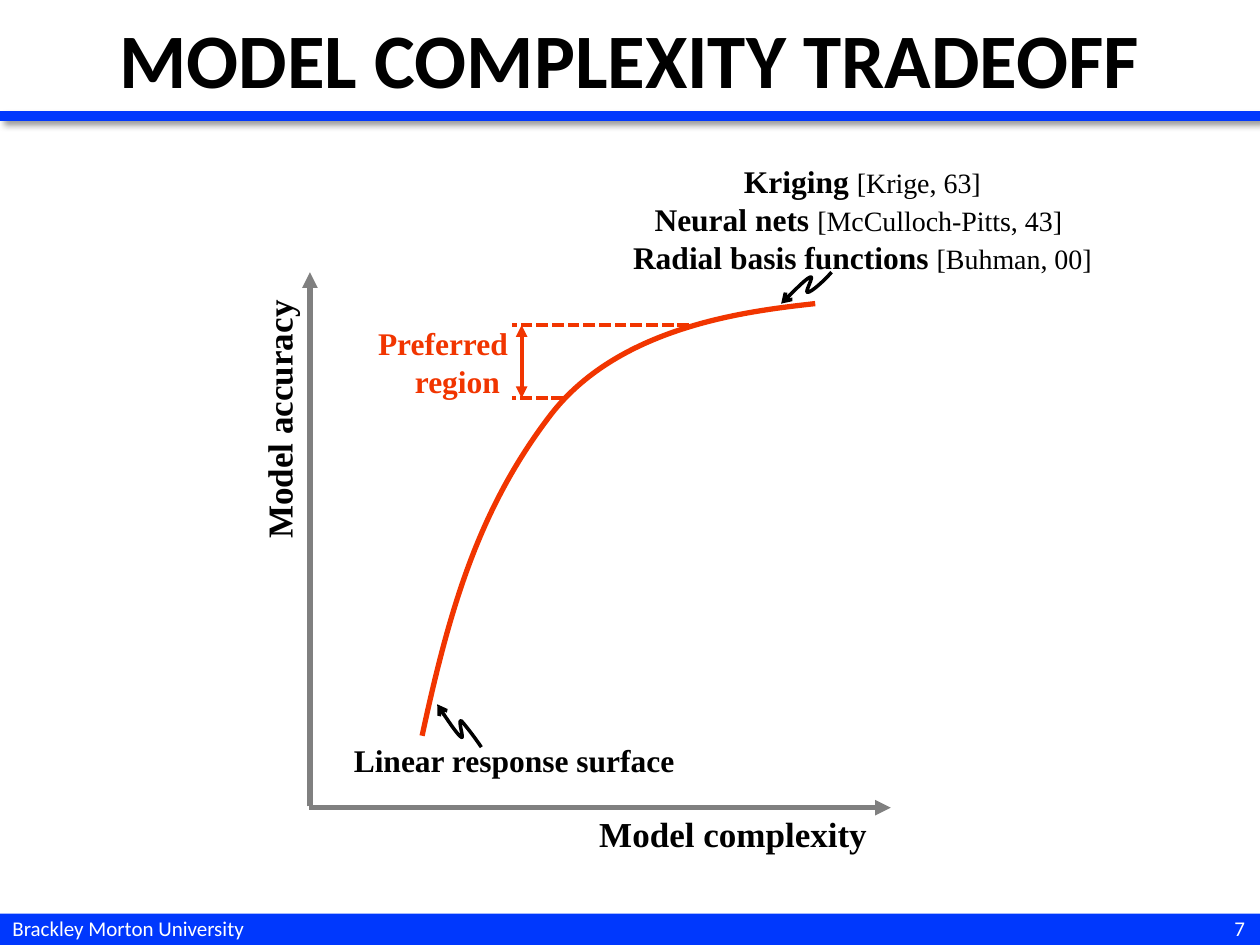
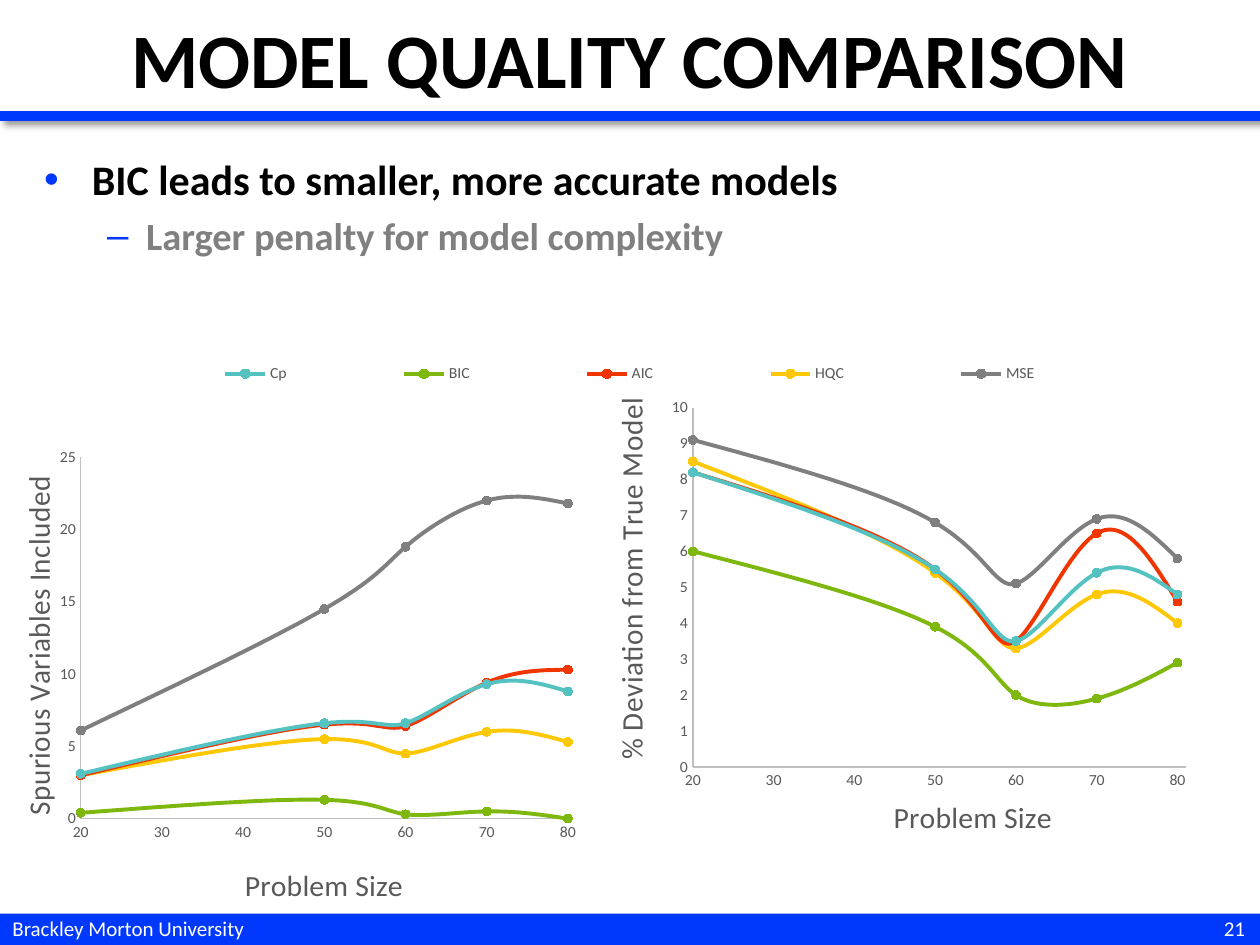
"""Build two slides on model complexity and model quality."""
from lxml import etree
from pptx import Presentation, util as u
from pptx.chart.data import XyChartData
from pptx.dml.color import RGBColor
from pptx.enum import chart as ch, dml, shapes, text
from pptx.oxml.ns import qn

BLUE, RED, GRAY, BLACK, WHITE = "0038FD", "F13500", "808080", "000000", "FFFFFF"
LABEL, AXIS = "595959", "BFBFBF"
SANS, SERIF = "Calibri", "Times New Roman"
LEFT, CENTER, RIGHT = text.PP_ALIGN.LEFT, text.PP_ALIGN.CENTER, text.PP_ALIGN.RIGHT
FOOTER = "Brackley Morton University"

TRADEOFF = ("MODEL COMPLEXITY TRADEOFF", 7)
QUALITY = ("MODEL QUALITY COMPARISON", 21)
CITE = dict(size=16, bold=False)
METHODS = [
    ["Kriging ", ("[Krige, 63]", CITE)],
    ["Neural nets ", ("[McCulloch-Pitts, 43]", CITE), " "],
    ["Radial basis functions ", ("[Buhman, 00]", CITE)],
]
LABELS = [
    (METHODS, (4.78, 1.24, 4.13, 1.01), dict(size=18, align=CENTER)),
    ("Model complexity", (4.08, 6.4, 2.9, 0.44), dict(size=20, align=RIGHT)),
    ("Model accuracy", (0.79, 3.49, 2.85, 0.44), dict(size=20, align=RIGHT, turn=270)),
    ("Linear response surface", (2.71, 5.83, 3.74, 0.4), dict(size=18)),
    ("Preferred region ", (2.8, 2.52, 1.33, 0.71), dict(size=18, align=RIGHT, color=RED)),
]
TOP, LOW = 2.58, 3.16
LINES = [
    ((5.47, TOP), (4.06, TOP), dict(color=RED, width=2.25, dash=True)),
    ((4.47, LOW), (4.06, LOW), dict(color=RED, width=2.25, dash=True)),
    ((4.14, LOW), (4.14, TOP), dict(color=RED, width=2.25, head="triangle", tail="triangle")),
    ((2.46, 6.4), (2.46, 2.16), dict(color=GRAY, width=3, tail="triangle")),
    ((2.45, 6.41), (7.07, 6.41), dict(color=GRAY, width=3, tail="triangle")),
]
CURVES = [
    ([(3.35, 5.84), (3.57, 4.82), (3.8, 4.05), (4.35, 3.32),
      (4.89, 2.59), (5.93, 2.47), (6.47, 2.41)], dict(color=RED, width=3)),
    ([(3.82, 5.93), (3.76, 5.84), (3.68, 5.74), (3.66, 5.72), (3.63, 5.71),
      (3.69, 5.88), (3.66, 5.85), (3.63, 5.83), (3.5, 5.64), (3.47, 5.59)],
     dict(color=BLACK, width=2, tail="arrow")),
    ([(6.6, 2.16), (6.54, 2.23), (6.44, 2.32), (6.41, 2.32), (6.38, 2.33),
      (6.47, 2.18), (6.43, 2.2), (6.4, 2.21), (6.24, 2.37), (6.2, 2.41)],
     dict(color=BLACK, width=2, tail="arrow")),
]

BULLETS = [
    ("BIC leads to smaller, more accurate models", 24, BLACK, 0.38, -0.38),
    ("Larger penalty for model complexity", 22, GRAY, 0.81, -0.31),
]
SIZES = [20, 50, 60, 70, 80]
MODELS = {"Cp": "55C2C2", "BIC": "7EB70D", "AIC": RED, "HQC": "FFC807", "MSE": "7F7F7F"}
CHARTS = [
    dict(box=(0, 3.33, 4.75, 3.92), plot=(0.135, 0.078, 0.814, 0.747),
         x=("Problem Size", (0.4, 0.91), 20, 80, 10),
         y=("Spurious Variables Included", (0.02, 0.12), 0, 25, 5),
         values=[[3.1, 6.6, 6.6, 9.3, 8.8], [0.4, 1.3, 0.3, 0.5, 0], [3, 6.5, 6.4, 9.4, 10.3],
                 [3, 5.5, 4.5, 6, 5.3], [6.1, 14.5, 18.8, 22, 21.8]]),
    dict(box=(0, 2.42, 10, 4.29), plot=(0.55, 0.194, 0.391, 0.679),
         x=("Problem Size", (0.705, 0.92), 20, 81, 10),
         y=("% Deviation from True Model", (0.48, 0.18), 0, 10, 1),
         legend=(0.09, 0.1, 0.82, 0.06),
         values=[[8.2, 5.5, 3.5, 5.4, 4.8], [6, 3.9, 2, 1.9, 2.9], [8.2, 5.5, 3.5, 6.5, 4.6],
                 [8.5, 5.4, 3.3, 4.8, 4], [9.1, 6.8, 5.1, 6.9, 5.8]]),
]


def rgb(color):
    return RGBColor.from_string(color)


def inches(values):
    return [u.Inches(v) for v in values]


def node(parent, tag, **attrs):
    return etree.SubElement(parent, qn(tag), {k: str(v) for k, v in attrs.items()})


def style(font, size, color, bold=False, name=SANS):
    font.size, font.bold, font.name = u.Pt(size), bold, name
    font.color.rgb = rgb(color)


def write(tf, content, size=18, color=BLACK, bold=True, font=SANS, align=LEFT):
    paragraphs = [[content]] if isinstance(content, str) else content
    for i, runs in enumerate(paragraphs):
        p = tf.paragraphs[0] if i == 0 else tf.add_paragraph()
        p.alignment = align
        for run in runs:
            words, extra = (run, {}) if isinstance(run, str) else run
            r = p.add_run()
            r.text = words
            style(r.font, **{**dict(size=size, color=color, bold=bold, name=font), **extra})


def add_text(s, content, box, turn=0, anchor=text.MSO_ANCHOR.TOP, **fmt):
    sp = s.shapes.add_textbox(*inches(box))
    sp.rotation = turn
    sp.text_frame.word_wrap = True
    sp.text_frame.vertical_anchor = anchor
    write(sp.text_frame, content, **fmt)
    return sp


def stroke(sp, color, width, dash=False, head=None, tail=None):
    sp.line.color.rgb = rgb(color)
    sp.line.width = u.Pt(width)
    if dash:
        sp.line.dash_style = dml.MSO_LINE.SQUARE_DOT
    ln = sp._element.spPr.find(qn("a:ln"))
    for tag, kind in (("a:headEnd", head), ("a:tailEnd", tail)):
        if kind:
            node(ln, tag, type=kind)


def add_line(s, start, end, **fmt):
    sp = s.shapes.add_connector(shapes.MSO_CONNECTOR.STRAIGHT, *inches(start + end))
    stroke(sp, **fmt)
    return sp, node(sp._element.spPr, "a:effectLst")


def add_curve(s, points, **fmt):
    start, *rest = [inches(pt) for pt in points]
    builder = s.shapes.build_freeform(*start)
    builder.add_line_segments(rest, close=False)
    sp = builder.convert_to_shape()
    sp.fill.background()
    sp.shadow.inherit = False
    stroke(sp, **fmt)
    outline = next(sp._element.iter(qn("a:path")))
    segments = outline.findall(qn("a:lnTo"))
    for i in range(0, len(segments), 3):
        bezier = node(outline, "a:cubicBezTo")
        for seg in segments[i:i + 3]:
            bezier.append(seg[0])
            outline.remove(seg)


def add_master_parts(prs, s):
    band = s.shapes.add_shape(shapes.MSO_SHAPE.RECTANGLE, *inches((0, 7.25, 10, 0.25)))
    band.fill.solid()
    band.fill.fore_color.rgb = rgb(BLUE)
    band.line.fill.background()
    band.shadow.inherit = False
    rule, effects = add_line(s, (0, 0.92), (10, 0.92), color=BLUE, width=6)
    shadow = node(effects, "a:outerShdw", blurRad=u.Pt(4), dist=u.Pt(3),
                  dir=45 * 60000, algn="tl", rotWithShape=0)
    node(node(shadow, "a:srgbClr", val=BLACK), "a:alpha", val=40000)
    footer = add_text(s, FOOTER, (0, 7.22, 3.08, 0.3), size=12, color=WHITE, bold=False)
    for sp in (band, rule, footer):
        prs.slide_master.shapes._spTree.append(sp._element)


def add_slide(prs, layout, title, number):
    s = prs.slides.add_slide(prs.slide_layouts[layout])
    sp = s.shapes.title
    sp.left, sp.top, sp.width, sp.height = inches((0, 0, 10, 0.92))
    sp.text_frame.vertical_anchor = text.MSO_ANCHOR.MIDDLE
    write(sp.text_frame, title, size=44, align=CENTER)
    add_text(s, str(number), (9.17, 7.22, 0.81, 0.3), anchor=text.MSO_ANCHOR.MIDDLE,
             size=12, color=WHITE, bold=False, align=RIGHT)
    return s


def place(element, index, position, inner=False):
    layout = element.find(qn("c:layout"))
    if layout is None:
        layout = node(element, "c:layout")
        element.insert(index, layout)
    manual = node(layout, "c:manualLayout")
    if inner:
        node(manual, "c:layoutTarget", val="inner")
    for key in "xy":
        node(manual, f"c:{key}Mode", val="edge")
    for key, value in zip("xywh", position):
        node(manual, f"c:{key}", val=value)


def format_axis(axis, title, position, low, high, step):
    axis.minimum_scale, axis.maximum_scale, axis.major_unit = low, high, step
    axis.has_major_gridlines = False
    axis.major_tick_mark = axis.minor_tick_mark = ch.XL_TICK_MARK.NONE
    axis.format.line.color.rgb = rgb(AXIS)
    axis.format.line.width = u.Pt(0.75)
    style(axis.tick_labels.font, 9, LABEL)
    write(axis.axis_title.text_frame, title, size=17, color=LABEL, bold=False, align=CENTER)
    place(axis.axis_title._element, 1, position)


def add_chart(s, box, plot, x, y, values, legend=None):
    data = XyChartData()
    for name, row in zip(MODELS, values):
        series = data.add_series(name)
        for size, value in zip(SIZES, row):
            series.add_data_point(size, value)
    chart = s.shapes.add_chart(ch.XL_CHART_TYPE.XY_SCATTER_SMOOTH, *inches(box), data).chart
    style(chart.font, 10, BLACK)
    chart.has_title = False
    chart.has_legend = legend is not None
    if legend:
        chart.legend.position = ch.XL_LEGEND_POSITION.BOTTOM
        chart.legend.include_in_layout = False
        style(chart.legend.font, 9, LABEL)
        place(chart.legend._element, 1, legend)
    format_axis(chart.category_axis, *x)
    format_axis(chart.value_axis, *y)
    place(chart._chartSpace.chart.plotArea, 0, plot, inner=True)
    chart.plots[0].vary_by_categories = False
    for series, color in zip(chart.plots[0].series, MODELS.values()):
        series._element.get_or_add_smooth().val = True
        series.format.line.color.rgb = rgb(color)
        series.format.line.width = u.Pt(2.25)
        marker = series.marker
        marker.style, marker.size = ch.XL_MARKER_STYLE.CIRCLE, 5
        marker.format.fill.solid()
        marker.format.fill.fore_color.rgb = rgb(color)
        marker.format.line.color.rgb = rgb(color)


def add_bullets(s):
    sp = s.placeholders[1]
    sp.left, sp.top, sp.width, sp.height = inches((0.25, 1.17, 9.5, 1.33))
    tf = sp.text_frame
    write(tf, [[(words, dict(size=size, color=color))] for words, size, color, *_ in BULLETS])
    for level, (p, (*_, margin, indent)) in enumerate(zip(tf.paragraphs, BULLETS)):
        p.level = level
        pPr = p._p.get_or_add_pPr()
        pPr.set("marL", str(u.Inches(margin)))
        pPr.set("indent", str(u.Inches(indent)))
        node(node(pPr, "a:buClr"), "a:srgbClr", val=BLUE)
        node(pPr, "a:buChar", char="•–"[level])


def main():
    prs = Presentation()
    prs.slide_width, prs.slide_height = inches((10, 7.5))
    s = add_slide(prs, 5, *TRADEOFF)
    add_master_parts(prs, s)
    for content, box, fmt in LABELS:
        add_text(s, content, box, font=SERIF, **fmt)
    for start, end, fmt in LINES:
        add_line(s, start, end, **fmt)
    for points, fmt in CURVES:
        add_curve(s, points, **fmt)
    s = add_slide(prs, 1, *QUALITY)
    for spec in CHARTS:
        add_chart(s, **spec)
    add_bullets(s)
    prs.save("out.pptx")


if __name__ == "__main__":
    main()
